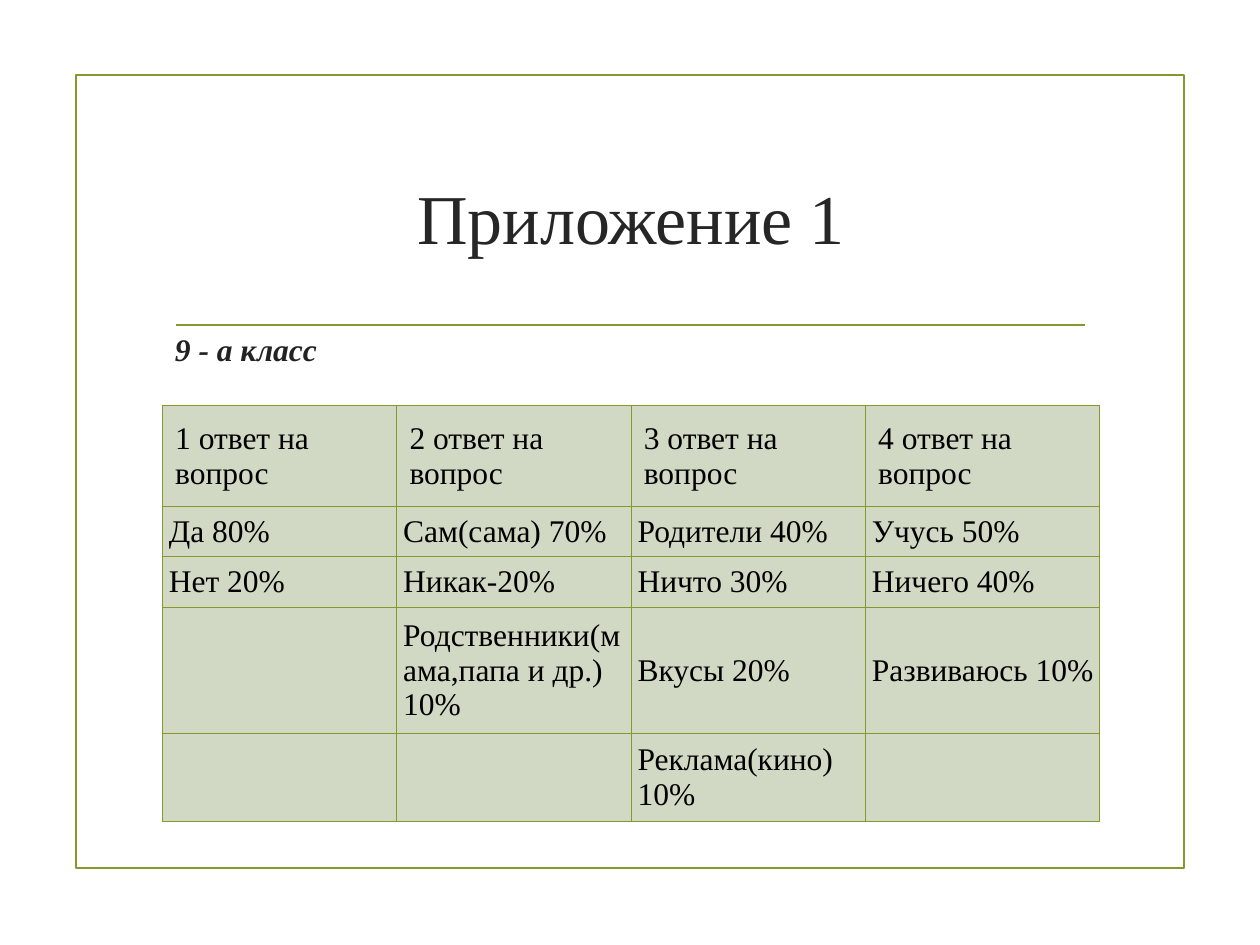
from lxml.etree import SubElement
from pptx import Presentation
from pptx.dml.color import RGBColor
from pptx.enum.shapes import MSO_CONNECTOR as Connector, MSO_SHAPE as Shape
from pptx.enum.text import MSO_ANCHOR as Anchor, MSO_AUTO_SIZE as AutoSize, PP_ALIGN as Align
from pptx.oxml.ns import qn
from pptx.util import Pt

TITLE = "Приложение 1"
SUBTITLE = "9 - а класс"
ROWS = [
    ["1 ответ на вопрос", "2 ответ на вопрос", "3 ответ на вопрос", "4 ответ на вопрос"],
    ["Да 80%", "Сам(сама) 70%", "Родители 40%", "Учусь 50%"],
    ["Нет 20%", "Никак-20%", "Ничто 30%", "Ничего 40%"],
    ["", "Родственники(мама,папа и др.) 10%", "Вкусы 20%", "Развиваюсь 10%"],
    ["", "", "Реклама(кино) 10%", ""],
]
ROW_HEIGHTS = [55.4, 27.4, 27.4, 68.4, 48.2]
FONT = "Times New Roman"
GREEN = "83992A"
CELL_FILL = "D1D8C3"
LEFT, WIDTH = 92.9, 535.7


def color(value):
    return RGBColor.from_string(value)


def style(para, size, tone, bold=False, italic=False):
    font = para.font
    font.name, font.size, font.bold, font.italic = FONT, Pt(size), bold, italic
    font.color.rgb = color(tone)


def set_line(line):
    line.color.rgb = color(GREEN)
    line.width = Pt(1.25)


def add_text(page, text, place, size, tone, **emphasis):
    box = page.shapes.add_textbox(*map(Pt, place))
    para = box.text_frame.paragraphs[0]
    para.text = text
    style(para, size, tone, **emphasis)
    return box.text_frame


def add_borders(cell):
    properties = cell._tc.get_or_add_tcPr()
    for index, side in enumerate(("lnL", "lnR", "lnT", "lnB")):
        border = properties.makeelement(qn(f"a:{side}"), {"w": str(Pt(0.75))})
        fill = SubElement(border, qn("a:solidFill"))
        SubElement(fill, qn("a:srgbClr"), val=GREEN)
        properties.insert(index, border)


def add_answers(page):
    table = page.shapes.add_table(len(ROWS), len(ROWS[0]), Pt(LEFT), Pt(231.8),
                                  Pt(WIDTH), Pt(sum(ROW_HEIGHTS))).table
    table.first_row = table.horz_banding = False
    for column in table.columns:
        column.width = Pt(WIDTH / len(ROWS[0]))
    for index, (texts, height) in enumerate(zip(ROWS, ROW_HEIGHTS)):
        table.rows[index].height = Pt(height)
        inset = Pt(3.6 if index else 7.2)
        for cell, text in zip(table.rows[index].cells, texts):
            cell.text = text
            cell.vertical_anchor = Anchor.MIDDLE
            cell.margin_left = cell.margin_right = inset
            cell.margin_top = cell.margin_bottom = inset
            cell.fill.solid()
            cell.fill.fore_color.rgb = color(CELL_FILL)
            add_borders(cell)
            style(cell.text_frame.paragraphs[0], 18, "000000")


def main():
    deck = Presentation()
    deck.slide_width, deck.slide_height = Pt(720), Pt(540)
    page = deck.slides.add_slide(deck.slide_layouts[6])

    frame = page.shapes.add_shape(Shape.RECTANGLE, Pt(43.6), Pt(42.7), Pt(633), Pt(453.4))
    frame.shadow.inherit = False
    frame.fill.background()
    set_line(frame.line)

    rule = page.shapes.add_connector(Connector.STRAIGHT, Pt(100.5), Pt(185.6), Pt(620), Pt(185.6))
    set_line(rule.line)
    SubElement(rule._element.spPr, qn("a:effectLst"))

    title = add_text(page, TITLE, (LEFT, 72, WIDTH, 103), 40, "262626")
    title.word_wrap = True
    title.vertical_anchor = Anchor.MIDDLE
    title.paragraphs[0].alignment = Align.CENTER

    add_answers(page)

    subtitle = add_text(page, SUBTITLE, (LEFT, 185.3, 96.5, 29), 18, "222222",
                        bold=True, italic=True)
    subtitle.word_wrap = False
    subtitle.auto_size = AutoSize.SHAPE_TO_FIT_TEXT

    deck.save("out.pptx")


if __name__ == "__main__":
    main()
